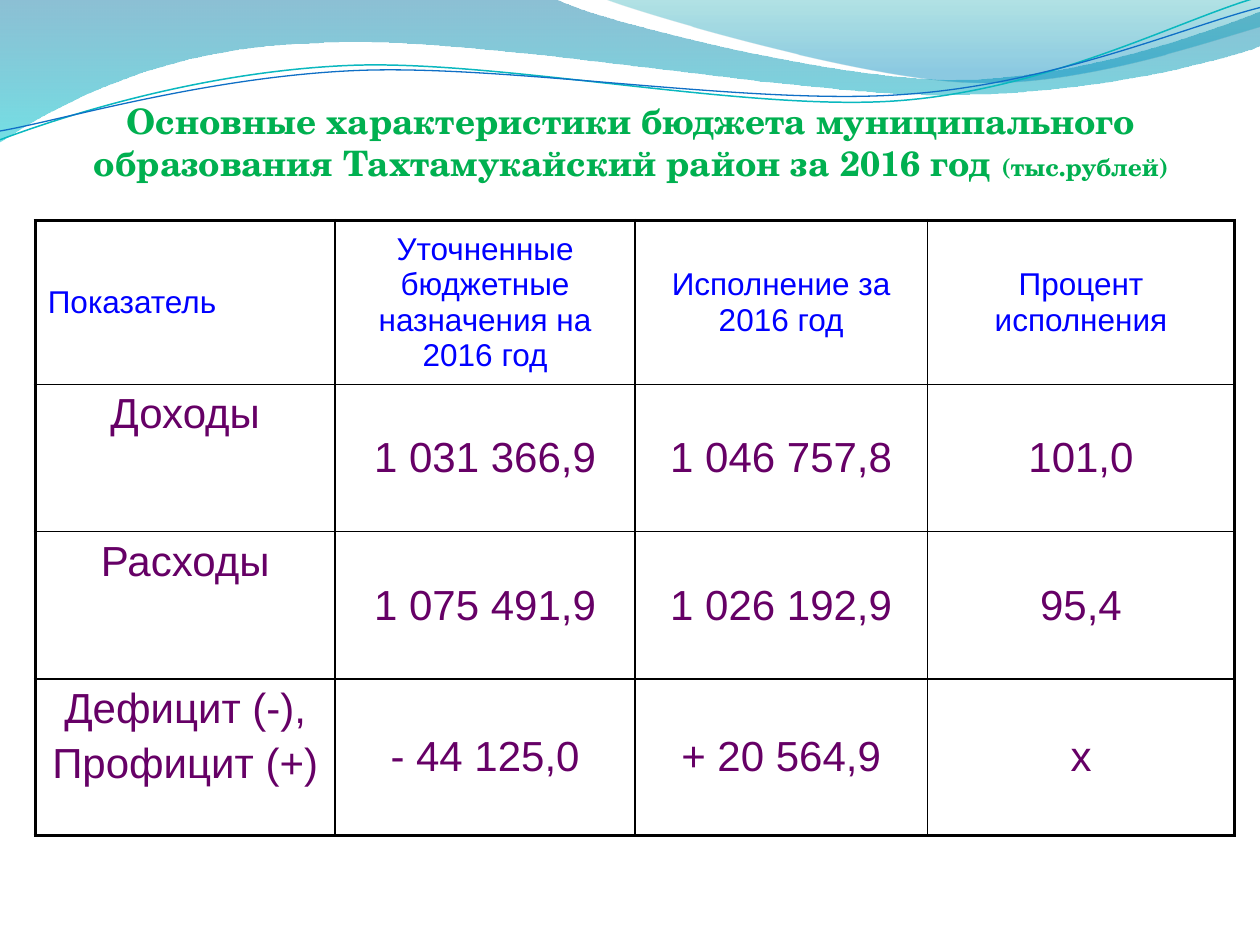
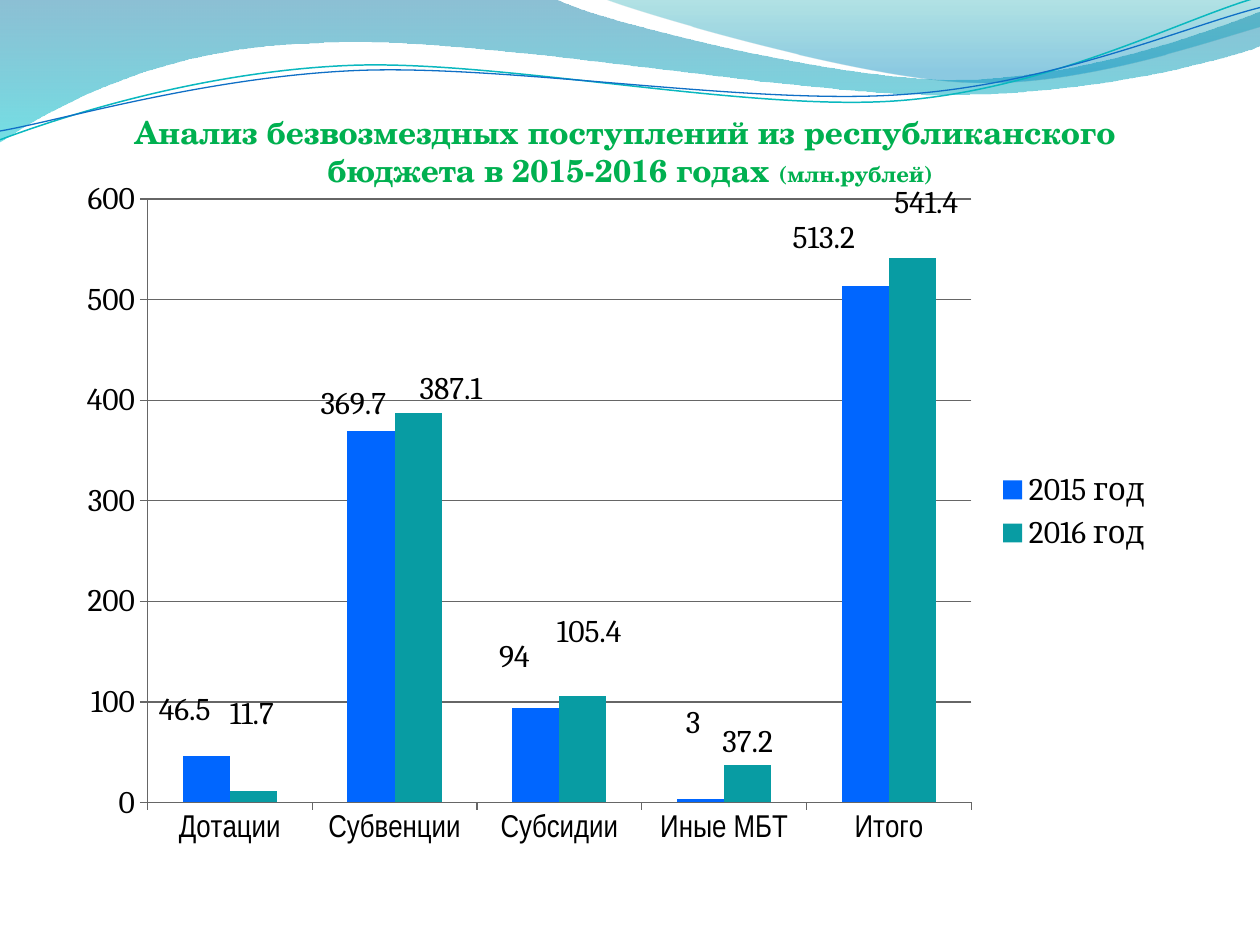
"""Builds two slides on the 2016 district budget: a table and a column chart."""
import pptx
import pptx.chart.data
import pptx.dml.color
import pptx.enum.chart
import pptx.enum.text
import pptx.oxml
import pptx.oxml.ns
import pptx.util

Inches = pptx.util.Inches
Pt = pptx.util.Pt
qn = pptx.oxml.ns.qn
new_element = pptx.oxml.xmlchemy.OxmlElement
ALIGN = pptx.enum.text.PP_ALIGN
ANCHOR = pptx.enum.text.MSO_ANCHOR
OUTSIDE_END = pptx.enum.chart.XL_LABEL_POSITION.OUTSIDE_END

COLORS = {
    "title": "00B050", "header": "0000FF", "figure": "660066", "black": "000000",
    "grid": "666666", "year_2015": "0066FF", "year_2016": "089CA3",
    "wave_top": "0074A1", "wave_bottom": "00C6CF",
    "crest_top": "00A1A9", "crest_bottom": "008BBF",
    "line_teal": "0AB8BF", "line_blue": "0F6FC6",
}
RGB = {name: pptx.dml.color.RGBColor.from_string(value) for name, value in COLORS.items()}
TITLE_FONT = "TeX Gyre Schola"

WAVES = [
    {"stops": [(0, "wave_top", 45), (1, "wave_bottom", 55)],
     "route": [(0, 0), (4.4, -0.01), (4.76, 0.17, 6.64, 0.63, 7.58, 0.63),
               (8.53, 0.63, 9.58, 0.26, 10, 0.09), (10.01, 0.36),
               (9.83, 0.44, 8.7, 0.76, 7.46, 0.75), (6.22, 0.75, 3.82, 0.28, 2.57, 0.34),
               (1.29, 0.36, 0.46, 0.83, -0.01, 1.13)]},
    {"stops": [(0, "crest_top", 30), (0.8, "crest_bottom", 45)],
     "route": [(4.79, -0.01), (5.09, 0.11, 6.82, 0.62, 7.69, 0.65),
               (8.56, 0.69, 9.61, 0.32, 10, 0.21), (10, 0)]},
    {"line": ("line_teal", 0.85),
     "route": [(0, 1.11), (0.48, 0.93, 1.58, 0.57, 2.77, 0.52),
               (3.95, 0.47, 5.93, 0.89, 7.13, 0.8), (8.33, 0.71, 9.38, 0.15, 9.98, -0.02)]},
    {"line": ("line_blue", 0.75),
     "route": [(0, 1.04), (0.47, 0.96, 1.64, 0.61, 2.83, 0.56),
               (4.03, 0.51, 5.97, 0.84, 7.17, 0.75), (8.36, 0.67, 9.41, 0.21, 10, 0.06)]},
]


def set_font(font, color, **values):
    for name, value in values.items():
        setattr(font, name, value)
    font.color.rgb = RGB[color]


def add_titled_slide(presentation, box, size, unit_size, heading, unit):
    slide = presentation.slides.add_slide(presentation.slide_layouts[6])
    for wave in WAVES:
        route = wave["route"]
        points = [(Inches(x), Inches(y)) for segment in route
                  for x, y in zip(segment[::2], segment[1::2])]
        builder = slide.shapes.build_freeform(*points[0])
        builder.add_line_segments(points[1:], close="stops" in wave)
        shape = builder.convert_to_shape()
        shape.shadow.inherit = False
        steps = shape._element.iter(qn("a:lnTo"))
        steps = iter(list(steps))
        for segment in route[1:]:
            first = next(steps)
            if len(segment) == 6:
                curve = new_element("a:cubicBezTo")
                first.addprevious(curve)
                for step in (first, next(steps), next(steps)):
                    curve.append(step[0])
                    step.getparent().remove(step)
        if "line" in wave:
            color, width = wave["line"]
            shape.fill.background()
            shape.line.color.rgb = RGB[color]
            shape.line.width = Pt(width)
            continue
        shape.line.fill.background()
        shape.fill.gradient()
        shape.fill.gradient_angle = 270
        for stop, (position, color, opacity) in zip(shape.fill.gradient_stops, wave["stops"]):
            stop.position = position
            stop.color.rgb = RGB[color]
            alpha = new_element("a:alpha")
            alpha.set("val", str(opacity * 1000))
            stop._gs.find(qn("a:srgbClr")).append(alpha)

    frame = slide.shapes.add_textbox(*map(Inches, box)).text_frame
    frame_format = {"word_wrap": True, "vertical_anchor": ANCHOR.BOTTOM, "margin_left": 0,
                    "margin_right": 0, "margin_top": Inches(0.05), "margin_bottom": 0}
    for name, value in frame_format.items():
        setattr(frame, name, value)
    paragraph = frame.paragraphs[0]
    paragraph.alignment = ALIGN.CENTER
    for text, points in ((heading + " ", size), (unit, unit_size)):
        run = paragraph.add_run()
        run.text = text
        set_font(run.font, "title", name=TITLE_FONT, size=Pt(points), bold=True)
    return slide


presentation = pptx.Presentation()
presentation.slide_width = Inches(10)
presentation.slide_height = Inches(7.5)

slide = add_titled_slide(
    presentation, (0.51, 0.21, 9, 1.25), 20, 14,
    "Основные характеристики бюджета муниципального образования Тахтамукайский район за 2016 год",
    "(тыс.рублей)")

BUDGET = [
    ["Показатель", "Уточненные бюджетные назначения на 2016 год",
     "Исполнение за 2016 год", "Процент исполнения"],
    ["Доходы", "1 031 366,9", "1 046 757,8", "101,0"],
    ["Расходы", "1 075 491,9", "1 026 192,9", "95,4"],
    ["Дефицит (-),\nПрофицит (+)", "- 44 125,0", "+ 20 564,9", "х"],
]
COLUMN_WIDTHS = [2.38, 2.38, 2.32, 2.44]
ROW_HEIGHTS = [1.17, 1.17, 1.17, 1.24]
last_row, last_column = len(ROW_HEIGHTS) - 1, len(COLUMN_WIDTHS) - 1

table = slide.shapes.add_table(
    len(ROW_HEIGHTS), len(COLUMN_WIDTHS), Inches(0.28), Inches(1.75),
    Inches(sum(COLUMN_WIDTHS)), Inches(sum(ROW_HEIGHTS))).table
table.first_row = table.horz_banding = False
for column, width in zip(table.columns, COLUMN_WIDTHS):
    column.width = Inches(width)
for row, height in zip(table.rows, ROW_HEIGHTS):
    row.height = Inches(height)

for row_index, texts in enumerate(BUDGET):
    for column_index, text in enumerate(texts):
        cell = table.cell(row_index, column_index)
        is_header, is_label = row_index == 0, column_index == 0
        cell.text = text
        cell.vertical_anchor = ANCHOR.TOP if is_label and not is_header else ANCHOR.MIDDLE
        for paragraph in cell.text_frame.paragraphs:
            paragraph.alignment = ALIGN.LEFT if is_header and is_label else ALIGN.CENTER
            paragraph.space_before = Pt(0 if is_header else 4.8)
            set_font(paragraph.runs[0].font, "header" if is_header else "figure",
                     name="Arial", size=Pt(18 if is_header else 24))
        outer_edges = {"L": is_label, "R": column_index == last_column,
                       "T": is_header, "B": row_index == last_row}
        properties = cell._tc.get_or_add_tcPr()
        for side, is_outer in outer_edges.items():
            border = new_element(f"a:ln{side}")
            border.set("w", str(Pt(2.25 if is_outer else 1)))
            solid = new_element("a:solidFill")
            color = new_element("a:srgbClr")
            color.set("val", COLORS["black"])
            solid.append(color)
            border.append(solid)
            properties.append(border)
        cell.fill.background()

slide = add_titled_slide(
    presentation, (0.57, 0.51, 8.86, 0.99), 18, 12.6,
    "Анализ безвозмездных поступлений из республиканского  бюджета в 2015-2016 годах",
    "(млн.рублей)")

CHART_WIDTH, CHART_HEIGHT = 8.74, 5.48
GRANTS = [
    ("2015 год", "year_2015", [46.5, 369.7, 94, 3, 513.2],
     {0: (-0.17, -0.18), 1: (-0.14, -0.03), 2: (-0.17, -0.22),
      3: (-0.06, -0.42), 4: (-0.33, -0.2)}),
    ("2016 год", "year_2016", [11.7, 387.1, 105.4, 37.2, 541.4],
     {0: (-0.01, -0.42), 1: (0.26, -0.01), 2: (0.05, -0.33), 4: (0.11, -0.25)}),
]
chart_data = pptx.chart.data.CategoryChartData()
chart_data.categories = ["Дотации", "Субвенции", "Субсидии", "Иные МБТ", "Итого"]
for name, color, values, offsets in GRANTS:
    chart_data.add_series(name, values)
chart = slide.shapes.add_chart(
    pptx.enum.chart.XL_CHART_TYPE.COLUMN_CLUSTERED, Inches(0.51), Inches(1.32),
    Inches(CHART_WIDTH), Inches(CHART_HEIGHT), chart_data).chart
set_font(chart.font, "black", name="Cambria", size=Pt(18))
chart.has_title = False
chart.has_legend = True
chart.legend.position = pptx.enum.chart.XL_LEGEND_POSITION.RIGHT
chart.legend.include_in_layout = False

category_axis, value_axis = chart.category_axis, chart.value_axis
set_font(category_axis.tick_labels.font, "black", name="Arial Narrow", size=Pt(18))
value_format = {"minimum_scale": 0, "maximum_scale": 600, "major_unit": 100,
                "has_major_gridlines": True}
for name, value in value_format.items():
    setattr(value_axis, name, value)
for axis in (category_axis, value_axis):
    axis.major_tick_mark = pptx.enum.chart.XL_TICK_MARK.OUTSIDE
for line in (category_axis.format.line, value_axis.format.line,
             value_axis.major_gridlines.format.line):
    line.color.rgb = RGB["grid"]
    line.width = Pt(0.75)

plot = chart.plots[0]
plot.gap_width = 150
plot.overlap = 0
plot.vary_by_categories = False
layouts = []
for series, (name, color, values, offsets) in zip(plot.series, GRANTS):
    series.format.fill.solid()
    series.format.fill.fore_color.rgb = RGB[color]
    series.data_labels.show_value = True
    series.data_labels.position = OUTSIDE_END
    for leader_lines in series._element.iter(qn("c:showLeaderLines")):
        leader_lines.set("val", "0")
    for index in offsets:
        series.points[index].data_label.position = OUTSIDE_END
    for label, (x, y) in zip(series._element.iter(qn("c:dLbl")), offsets.values()):
        layouts.append((label, 1, {"x": x / CHART_WIDTH, "y": y / CHART_HEIGHT}))

plot_area = chart._chartSpace.chart.plotArea
for layout in plot_area.findall(qn("c:layout")):
    plot_area.remove(layout)
layouts.append((plot_area, 0, {
    "layoutTarget": "inner", "xMode": "edge", "yMode": "edge",
    "x": 0.66 / CHART_WIDTH, "y": 0.26 / CHART_HEIGHT,
    "w": 6.54 / CHART_WIDTH, "h": 4.79 / CHART_HEIGHT}))
for parent, position, settings in layouts:
    layout, manual = new_element("c:layout"), new_element("c:manualLayout")
    for name, value in settings.items():
        setting = new_element(f"c:{name}")
        setting.set("val", str(value))
        manual.append(setting)
    layout.append(manual)
    parent.insert(position, layout)

presentation.save("out.pptx")
